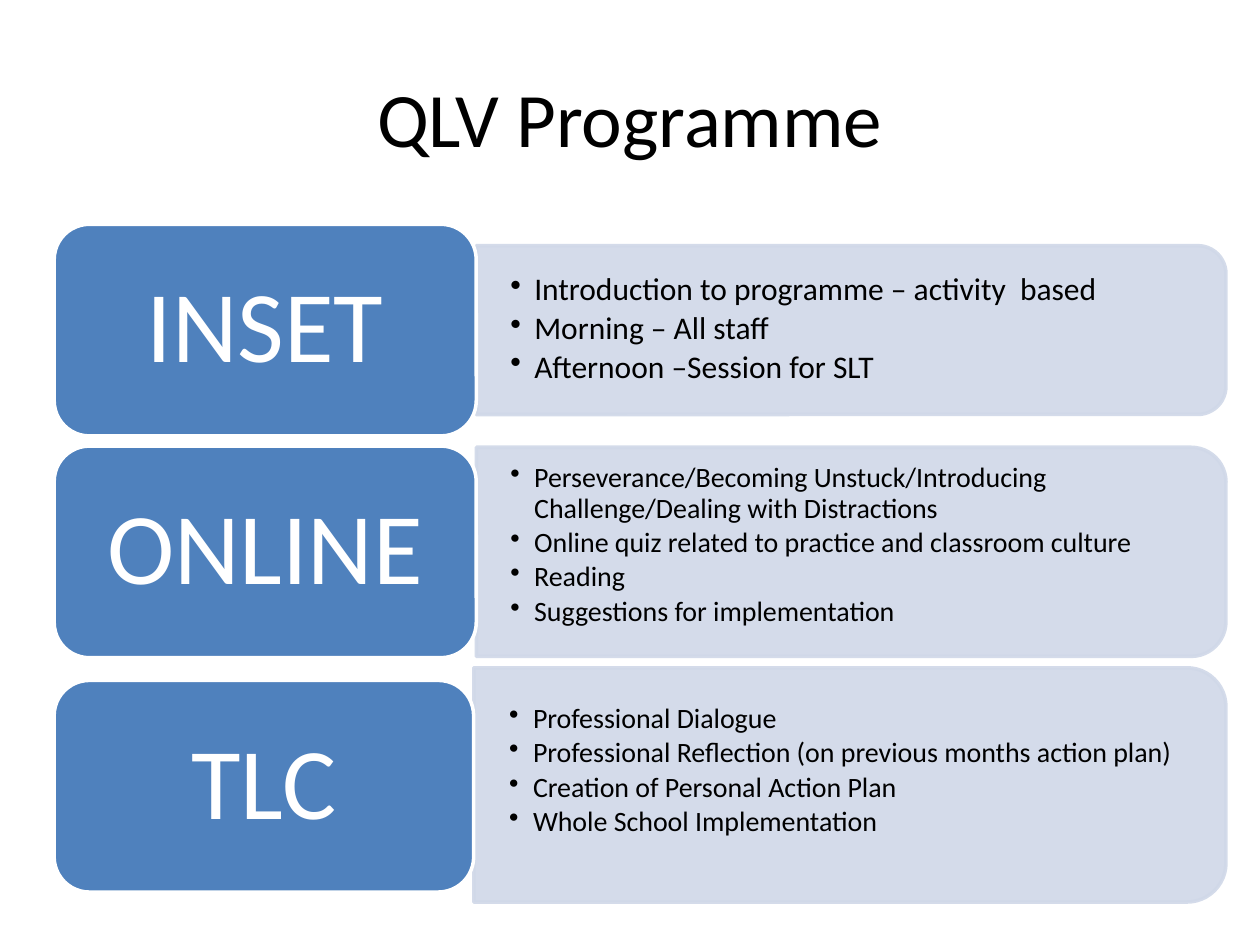
from lxml import etree
from pptx import Presentation
from pptx.dml.color import RGBColor
from pptx.enum import shapes, text
from pptx.oxml.ns import qn
from pptx.util import Inches, Pt

FONT = "Calibri"
BLUE, PALE, WHITE, BLACK = "4F81BD", "D0D8E8", "FFFFFF", "000000"
LABEL_LEFT, LABEL_HEIGHT = 0.43, 1.68

# label: (text, top, width); panel and body: (left, top, width, height)
ROWS = [
    dict(label=("INSET", 1.78, 3.35), panel=(3.78, 1.95, 5.95, 1.34),
         body=(3.78, 2.01, 5.89, 1.21), bottom=0, size=18,
         points=["Introduction to programme – activity  based",
                 "Morning – All staff",
                 "Afternoon –Session for SLT"]),
    dict(label=("ONLINE", 3.54, 3.35), panel=(3.78, 3.55, 5.95, 1.66),
         body=(3.78, 3.63, 5.87, 1.5), bottom=0.1, size=16,
         points=["Perseverance/Becoming Unstuck/Introducing "
                 "Challenge/Dealing with Distractions",
                 "Online quiz related to practice and classroom culture",
                 "Reading",
                 "Suggestions for implementation"]),
    dict(label=("TLC", 5.4, 3.33), panel=(3.76, 5.3, 5.97, 1.86),
         body=(3.77, 5.4, 5.88, 1.68), bottom=0.24, size=16,
         points=["Professional Dialogue",
                 "Professional Reflection (on previous months action plan)",
                 "Creation of Personal Action Plan",
                 "Whole School Implementation"]),
]


def colour(value):
    return RGBColor.from_string(value)


def style_font(font, size, value):
    font.name, font.size = FONT, Pt(size)
    font.color.rgb = colour(value)


def paint(shape, fill, line):
    shape.shadow.inherit = False
    shape.fill.solid()
    shape.fill.fore_color.rgb = colour(fill)
    shape.line.color.rgb = colour(line)
    shape.line.width = Pt(2)


def add_title(page, words):
    title = page.shapes.title
    title.left, title.top, title.width, title.height = map(
        Inches, (0.5, 0.3, 9, 1.25))
    title.text_frame.text = words
    para = title.text_frame.paragraphs[0]
    para.alignment = text.PP_ALIGN.CENTER
    style_font(para.runs[0].font, 44, BLACK)


def add_panel(page, left, top, width, height):
    """Rounds the right-hand corners by turning the shape a quarter."""
    panel = page.shapes.add_shape(
        shapes.MSO_SHAPE.ROUND_2_SAME_RECTANGLE,
        Inches(left + (width - height) / 2),
        Inches(top + (height - width) / 2), Inches(height), Inches(width))
    panel.rotation = 90
    paint(panel, PALE, PALE)
    for tint in panel._element.spPr.iter(qn("a:srgbClr")):
        etree.SubElement(tint, qn("a:alpha"), val="90000")


def add_points(page, box, bottom, size, points):
    body = page.shapes.add_textbox(*map(Inches, box))
    frame = body.text_frame
    frame.word_wrap = True
    frame.vertical_anchor = text.MSO_ANCHOR.MIDDLE
    frame.margin_left = frame.margin_right = Inches(0.27)
    frame.margin_top, frame.margin_bottom = 0, Inches(bottom)
    frame.text = "\n".join(points)
    for para in frame.paragraphs:
        para.level = 1
        para.line_spacing = 0.9
        para.space_after = Pt(size * 0.15)
        properties = para._p.get_or_add_pPr()
        properties.set("marL", str(Inches(0.19)))
        properties.set("indent", str(Inches(-0.19)))
        etree.SubElement(properties, qn("a:buChar"), char="•")
        style_font(para.runs[0].font, size, BLACK)


def add_label(page, words, top, width):
    label = page.shapes.add_shape(
        shapes.MSO_SHAPE.ROUNDED_RECTANGLE, Inches(LABEL_LEFT), Inches(top),
        Inches(width), Inches(LABEL_HEIGHT))
    paint(label, BLUE, WHITE)
    frame = label.text_frame
    frame.text = words
    frame.vertical_anchor = text.MSO_ANCHOR.MIDDLE
    para = frame.paragraphs[0]
    para.alignment = text.PP_ALIGN.CENTER
    para.line_spacing = 0.9
    style_font(para.runs[0].font, 58, WHITE)


def add_row(page, row):
    add_panel(page, *row["panel"])
    add_points(page, row["body"], row["bottom"], row["size"], row["points"])
    add_label(page, *row["label"])


def main():
    deck = Presentation()
    deck.slide_width, deck.slide_height = Inches(10), Inches(7.5)
    page = deck.slides.add_slide(deck.slide_layouts[5])
    add_title(page, "QLV Programme")
    for row in ROWS:
        add_row(page, row)
    deck.save("out.pptx")


if __name__ == "__main__":
    main()
